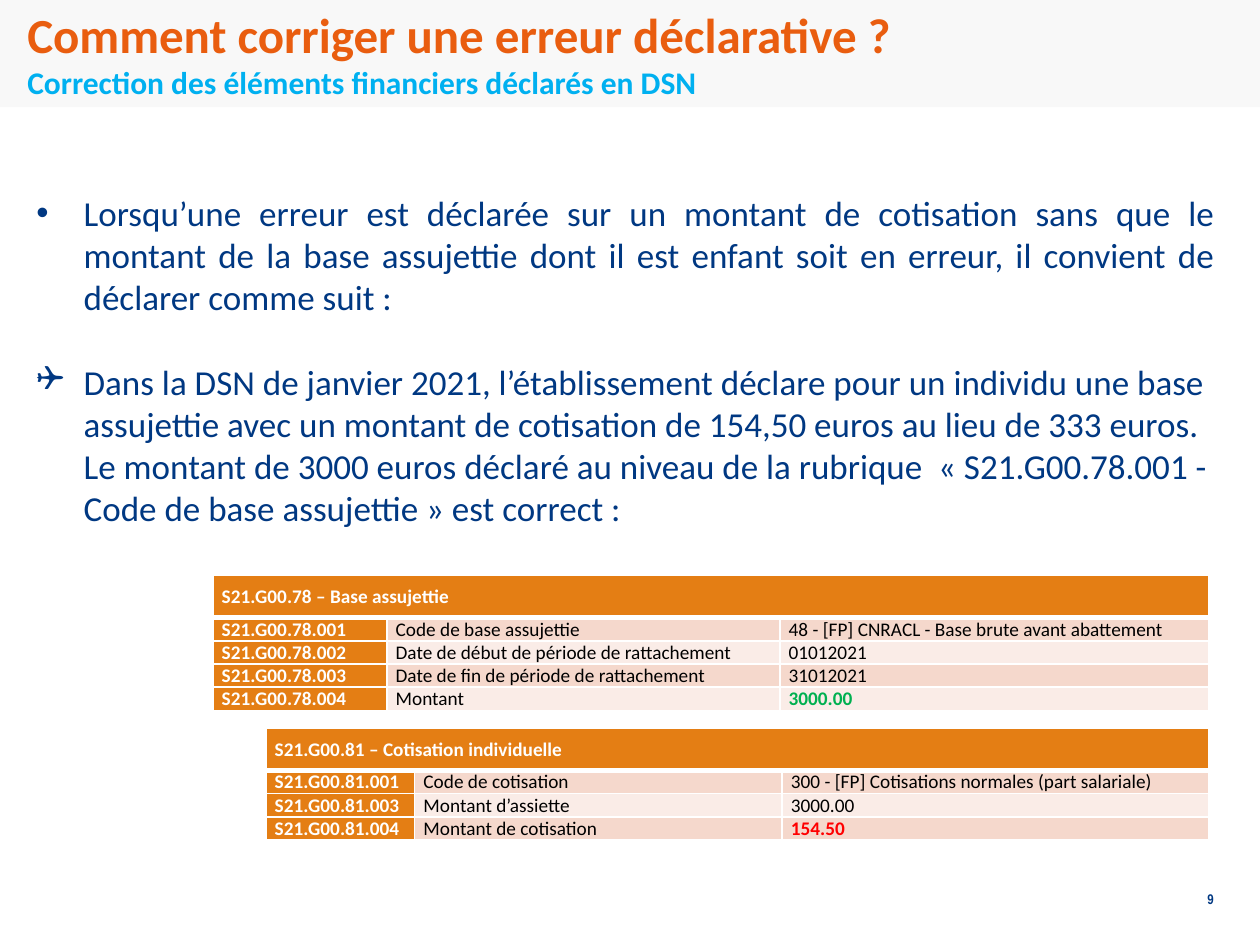
import copy
import pptx
import pptx.util
import pptx.oxml
import pptx.oxml.ns
import pptx.dml.color
import pptx.enum.shapes
import pptx.enum.text

Pt = pptx.util.Pt
ALIGN = pptx.enum.text.PP_ALIGN
ANCHOR = pptx.enum.text.MSO_ANCHOR

COLORS = {
    "band": "F8F8F8", "title": "E95D0F", "subtitle": "00B0F0", "text": "003882",
    "header": "E47E14", "odd": "F5D8CC", "even": "FAECE7", "white": "FFFFFF",
    "black": "000000", "right": "00B050", "wrong": "FF0000",
}

TITLE = [
    ("Comment corriger une erreur déclarative ?", 28, "title"),
    ("Correction des éléments financiers déclarés en DSN", 18, "subtitle"),
]
BODY = [
    ("•", "Arial", ALIGN.JUSTIFY, 0,
     "Lorsqu’une erreur est déclarée sur un montant de cotisation sans que le montant de la "
     "base assujettie dont il est enfant soit en erreur, il convient de déclarer comme suit :"),
    ("❑", "Wingdings", ALIGN.LEFT, 24.4,
     "Dans la DSN de janvier 2021, l’établissement déclare pour un individu une base assujettie "
     "avec un montant de cotisation de 154,50 euros au lieu de 333 euros. Le montant de 3000 "
     "euros déclaré au niveau de la rubrique  « S21.G00.78.001 - Code de base assujettie » "
     "est correct :"),
]
TABLES = [
    {"left": 121.7, "top": 329, "cols": [99.4, 224.6, 244.8], "mark": "right",
     "header": "S21.G00.78 – Base assujettie",
     "rows": [
         ("S21.G00.78.001", "Code de base assujettie",
          "48 - [FP] CNRACL - Base brute avant abattement"),
         ("S21.G00.78.002", "Date de début de période de rattachement", "01012021"),
         ("S21.G00.78.003", "Date de fin de période de rattachement", "31012021"),
         ("S21.G00.78.004", "Montant", "3000.00"),
     ]},
    {"left": 152, "top": 416.3, "cols": [85, 210, 244], "mark": "wrong",
     "header": "S21.G00.81 – Cotisation individuelle",
     "rows": [
         ("S21.G00.81.001", "Code de cotisation",
          "300 - [FP] Cotisations normales (part salariale)"),
         ("S21.G00.81.003", "Montant d’assiette", "3000.00"),
         ("S21.G00.81.004", "Montant de cotisation", "154.50"),
     ]},
]
HEADER_HEIGHT, ROW_HEIGHT = 24, 13.15
CELL = {"margin_left": Pt(5), "margin_right": Pt(5), "margin_top": 0, "margin_bottom": 0,
        "vertical_anchor": ANCHOR.MIDDLE}


def rgb(name):
    return pptx.dml.color.RGBColor.from_string(COLORS[name])


def apply(obj, values):
    for name, value in values.items():
        setattr(obj, name, value)


def add_run(p, text, size, color, bold=False, font="Calibri"):
    r = p.add_run()
    r.text = text
    apply(r.font, {"size": Pt(size), "bold": bold, "name": font})
    r.font.color.rgb = rgb(color)
    return r


def add_text_box(s, *box):
    tf = s.shapes.add_textbox(*map(Pt, box)).text_frame
    tf.word_wrap = True
    return tf


def add_bullet(p, char, font):
    ppr = p._p.get_or_add_pPr()
    ppr.set("marL", str(Pt(27)))
    ppr.set("indent", str(-Pt(27)))
    for tag, key, value in (("buFont", "typeface", font), ("buChar", "char", char)):
        ppr.append(pptx.oxml.parse_xml(
            f'<a:{tag} {pptx.oxml.ns.nsdecls("a")} {key}="{value}"/>'))


def set_borders(cell, top, bottom):
    tcpr = cell._tc.get_or_add_tcPr()
    for side, width in (("L", 1), ("R", 1), ("T", top), ("B", bottom)):
        tcpr.append(pptx.oxml.parse_xml(
            f'<a:ln{side} {pptx.oxml.ns.nsdecls("a")} w="{Pt(width)}"><a:solidFill>'
            f'<a:srgbClr val="{COLORS["white"]}"/></a:solidFill></a:ln{side}>'))


def add_data_table(s, data):
    rows = [(data["header"], "", "")] + data["rows"]
    heights = [HEADER_HEIGHT] + [ROW_HEIGHT] * len(data["rows"])
    box = data["left"], data["top"], sum(data["cols"]), sum(heights)
    table = s.shapes.add_table(len(rows), 3, *map(Pt, box)).table
    apply(table, {"first_row": False, "horz_banding": False})
    for col, width in zip(table.columns, data["cols"]):
        col.width = Pt(width)
    for i, (row, height) in enumerate(zip(rows, heights)):
        table.rows[i].height = Pt(height)
        for j, text in enumerate(row):
            cell = table.cell(i, j)
            label = i == 0 or j == 0
            marked = i == len(rows) - 1 and j == 2
            set_borders(cell, 3 if i == 1 else 1, 3 if i == 0 else 1)
            apply(cell, CELL)
            cell.fill.solid()
            cell.fill.fore_color.rgb = rgb("header" if label else "odd" if i % 2 else "even")
            if text:
                p = cell.text_frame.paragraphs[0]
                p.alignment = ALIGN.LEFT if (i, j) == (1, 2) else ALIGN.JUSTIFY
                color = "white" if label else data["mark"] if marked else "black"
                add_run(p, text, 11, color, label or marked)
    table.cell(0, 0).merge(table.cell(0, 2))


def main():
    prs = pptx.Presentation()
    apply(prs, {"slide_width": Pt(720), "slide_height": Pt(540)})
    s = prs.slides.add_slide(prs.slide_layouts[5])

    band = s.shapes.add_shape(pptx.enum.shapes.MSO_SHAPE.RECTANGLE, 0, 0, Pt(720), Pt(61.2))
    band.shadow.inherit = False
    band.fill.solid()
    band.fill.fore_color.rgb = rgb("band")
    band.line.fill.background()
    s.shapes._spTree.insert(2, band._element)

    title = s.shapes.title
    apply(title, {"left": Pt(8.4), "top": 0, "width": Pt(682.6), "height": Pt(60.5)})
    tf = title.text_frame
    apply(tf, {"word_wrap": True, "vertical_anchor": ANCHOR.MIDDLE,
               "auto_size": pptx.enum.text.MSO_AUTO_SIZE.NONE})
    p = tf.paragraphs[0]
    p.alignment = ALIGN.LEFT
    for i, (text, size, color) in enumerate(TITLE):
        if i:
            p.add_line_break()
            p._p[-1].append(copy.deepcopy(r._r.rPr))
        r = add_run(p, text, size, color, True)

    tf = add_text_box(s, 13.7, 105.8, 687.6, 200.9)
    for i, (char, font, align, gap, text) in enumerate(BODY):
        p = tf.add_paragraph() if i else tf.paragraphs[0]
        add_bullet(p, char, font)
        apply(p, {"alignment": align, "space_before": Pt(gap)})
        add_run(p, text, 20, "text")

    for data in TABLES:
        add_data_table(s, data)

    p = add_text_box(s, 532.8, 505.4, 167.8, 28.8).paragraphs[0]
    p.alignment = ALIGN.RIGHT
    add_run(p, "9", 8, "text", True, "Arial Narrow")

    prs.save("out.pptx")


if __name__ == "__main__":
    main()
